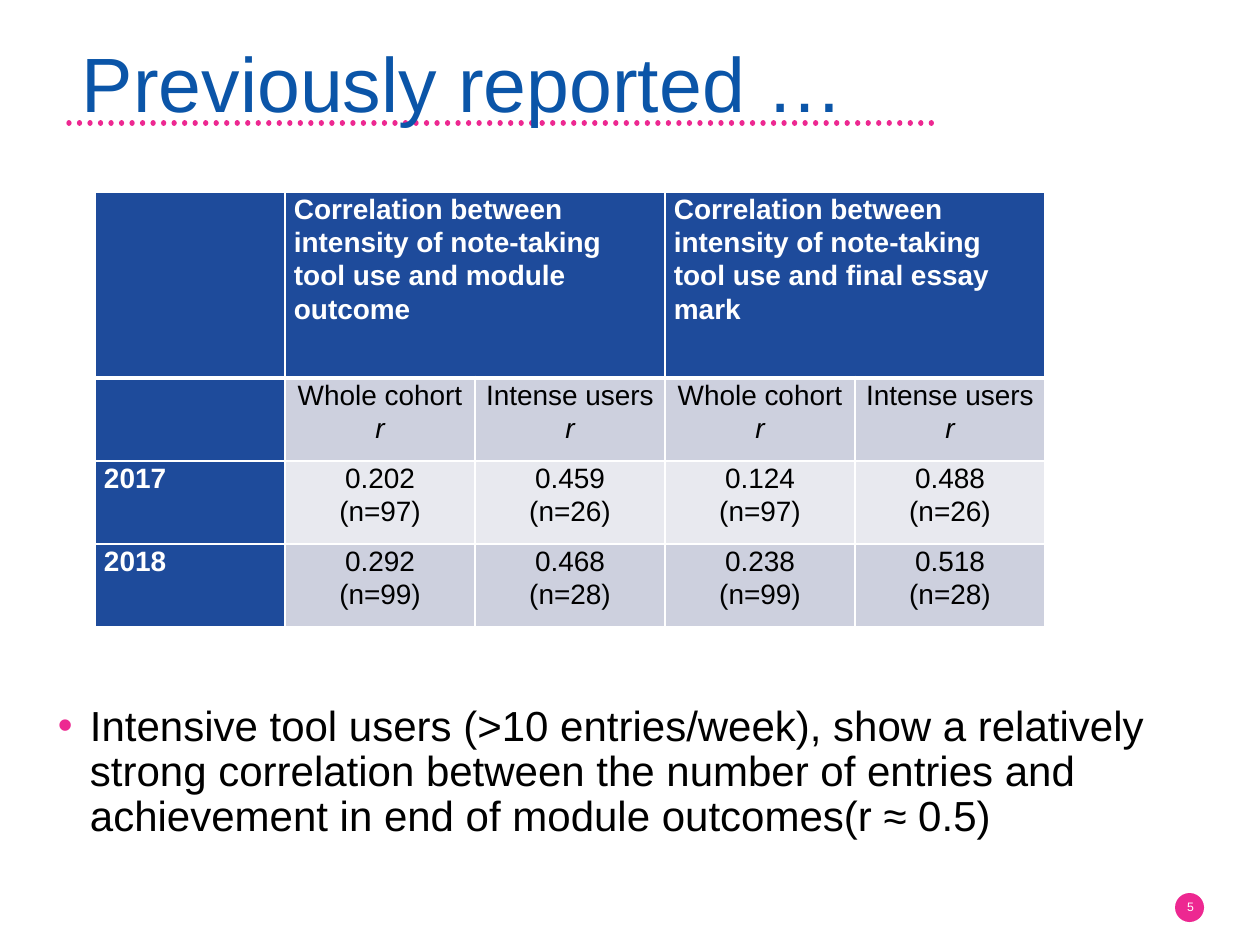
from lxml import etree
from pptx import Presentation
from pptx.dml.color import RGBColor
from pptx.enum.dml import MSO_LINE
from pptx.enum.shapes import MSO_CONNECTOR, MSO_SHAPE
from pptx.enum.text import MSO_ANCHOR, PP_ALIGN
from pptx.oxml.ns import qn
from pptx.util import Emu, Pt

PX_PER_INCH = 126
LEFT, CENTER = PP_ALIGN.LEFT, PP_ALIGN.CENTER
TOP, MIDDLE = MSO_ANCHOR.TOP, MSO_ANCHOR.MIDDLE
ELLIPSE = MSO_SHAPE.OVAL
STRAIGHT = MSO_CONNECTOR.STRAIGHT
ROUND_DOT = MSO_LINE.ROUND_DOT

PINK, TITLE_BLUE, HEADER_BLUE = "ED2891", "0B55A8", "1E4B9B"
WHITE, BLACK = "FFFFFF", "000000"
BANDS = ["CDD0DE", "E8E9EF"]


def px(length):
    return Emu(round(length * 914400 / PX_PER_INCH))


def color(value):
    return RGBColor.from_string(value)


def set_values(target, values):
    for name, value in values.items():
        setattr(target, name, value)


def add_element(parent, tag, **attributes):
    return etree.SubElement(parent, qn(tag), attributes)


class SlideBuilder:
    """Holds the type style and the slide being drawn."""

    font_name = "Arial"

    def __init__(self, slide):
        self.slide = slide
        self.shapes = slide.shapes

    def add_runs(self, paragraph, runs, size, text_color, bold=False, **layout):
        """Add runs given as (text, italic) pairs."""
        set_values(paragraph, layout)
        for text, italic in runs:
            run = paragraph.add_run()
            run.text = text
            set_values(run.font, {"name": self.font_name, "size": Pt(size),
                                  "bold": bold, "italic": italic})
            run.font.color.rgb = color(text_color)

    def ellipse(self, box, fill):
        shape = self.shapes.add_shape(ELLIPSE, *map(px, box))
        shape.shadow.inherit = False
        shape.fill.solid()
        shape.fill.fore_color.rgb = color(fill)
        shape.line.fill.background()

    def dotted_line(self, start, end, line_color, width):
        connector = self.shapes.add_connector(STRAIGHT, *map(px, start + end))
        connector.line.color.rgb = color(line_color)
        set_values(connector.line, {"width": Pt(width), "dash_style": ROUND_DOT})
        properties = connector._element.spPr
        properties.find(qn("a:ln")).set("cap", "rnd")
        add_element(properties, "a:effectLst")

    def text(self, box, text, size, text_color, anchor=TOP, margins=(13, 6),
             bullet_color=None, **layout):
        frame = self.shapes.add_textbox(*map(px, box)).text_frame
        across, down = map(px, margins)
        set_values(frame, {"word_wrap": True, "vertical_anchor": anchor,
                           "margin_left": across, "margin_right": across,
                           "margin_top": down, "margin_bottom": down})
        paragraph = frame.paragraphs[0]
        if bullet_color:
            self.bullet(paragraph, bullet_color)
        self.add_runs(paragraph, [(text, False)], size, text_color, **layout)

    def bullet(self, paragraph, bullet_color, indent=32):
        properties = paragraph._p.get_or_add_pPr()
        properties.set("marL", str(px(indent)))
        properties.set("indent", str(-px(indent)))
        holder = add_element(properties, "a:buClr")
        add_element(holder, "a:srgbClr", val=bullet_color)
        add_element(properties, "a:buFont", typeface=self.font_name)
        add_element(properties, "a:buChar", char="•")

    def table(self, left, top, column_width, row_heights, column_count):
        table = self.shapes.add_table(
            len(row_heights), column_count, px(left), px(top),
            px(column_width * column_count), px(sum(row_heights))).table
        for column in table.columns:
            column.width = px(column_width)
        for row, height in zip(table.rows, row_heights):
            row.height = px(height)
        return table

    def cell(self, cell, paragraphs, fill, text_color, top_width=1,
             bottom_width=1, bold=False, alignment=LEFT):
        """Fill one table cell; paragraphs is a list of run lists."""
        set_values(cell, {"margin_left": px(9), "margin_right": px(9),
                          "margin_top": 0, "margin_bottom": 0})
        widths = {"a:lnL": 1, "a:lnR": 1, "a:lnT": top_width, "a:lnB": bottom_width}
        properties = cell._tc.get_or_add_tcPr()
        for tag, width in widths.items():
            border = add_element(properties, tag, w=str(Pt(width)))
            add_element(add_element(border, "a:solidFill"), "a:srgbClr", val=WHITE)
        cell.fill.solid()
        cell.fill.fore_color.rgb = color(fill)
        frame = cell.text_frame
        for index, runs in enumerate(paragraphs):
            paragraph = frame.add_paragraph() if index else frame.paragraphs[0]
            self.add_runs(paragraph, runs, 16, text_color, bold,
                          alignment=alignment, line_spacing=1.07)


def add_correlation_table(builder):
    outcomes = ["module outcome", "final essay mark"]
    cohorts = ["Whole cohort ", "Intense users "]
    results = {
        "2017": [("0.202", 97), ("0.459", 26), ("0.124", 97), ("0.488", 26)],
        "2018": [("0.292", 99), ("0.468", 28), ("0.238", 99), ("0.518", 28)],
    }
    headings = [f"Correlation between intensity of note-taking tool use and {outcome}"
                for outcome in outcomes]
    table = builder.table(95, 192, 190, [186, 83, 83, 83], 5)

    header = ["", headings[0], "", headings[1], ""]
    for column, heading in enumerate(header):
        paragraphs = [[(heading, False)]] if heading else []
        builder.cell(table.cell(0, column), paragraphs, HEADER_BLUE, WHITE,
                     bottom_width=3, bold=True)
    for column in (1, 3):
        table.cell(0, column).merge(table.cell(0, column + 1))

    body = [("", [[[(cohort, False), ("r", True)]] for cohort in cohorts * 2])]
    for year, values in results.items():
        body.append((year, [[[(value, False)], [(f"(n={count})", False)]]
                            for value, count in values]))
    for row, (label, contents) in enumerate(body, start=1):
        top_width = 3 if row == 1 else 1
        builder.cell(table.cell(row, 0), [[(label, False)]] if label else [],
                     HEADER_BLUE, WHITE, top_width, bold=True)
        for column, paragraphs in enumerate(contents, start=1):
            builder.cell(table.cell(row, column), paragraphs, BANDS[(row - 1) % 2],
                         BLACK, top_width, alignment=CENTER)


def main():
    presentation = Presentation()
    set_values(presentation, {"slide_width": px(1260), "slide_height": px(945)})
    builder = SlideBuilder(presentation.slides.add_slide(presentation.slide_layouts[6]))

    builder.ellipse((1175, 893, 29, 29), PINK)
    builder.dotted_line((69, 123), (941, 123), PINK, 3)
    builder.text((1166, 882, 49, 50), "5", 7, WHITE, MIDDLE, (18, 9), alignment=CENTER)
    builder.text((69, 40, 921, 81), "Previously reported …", 44, TITLE_BLUE,
                 line_spacing=0.9)
    builder.text((45, 699, 1121, 188),
                 "Intensive tool users (>10 entries/week), show a relatively strong "
                 "correlation between the number of entries and achievement in end of "
                 "module outcomes(r ≈ 0.5)",
                 24, BLACK, bullet_color=PINK, line_spacing=0.9)
    add_correlation_table(builder)

    presentation.save("out.pptx")


if __name__ == "__main__":
    main()
